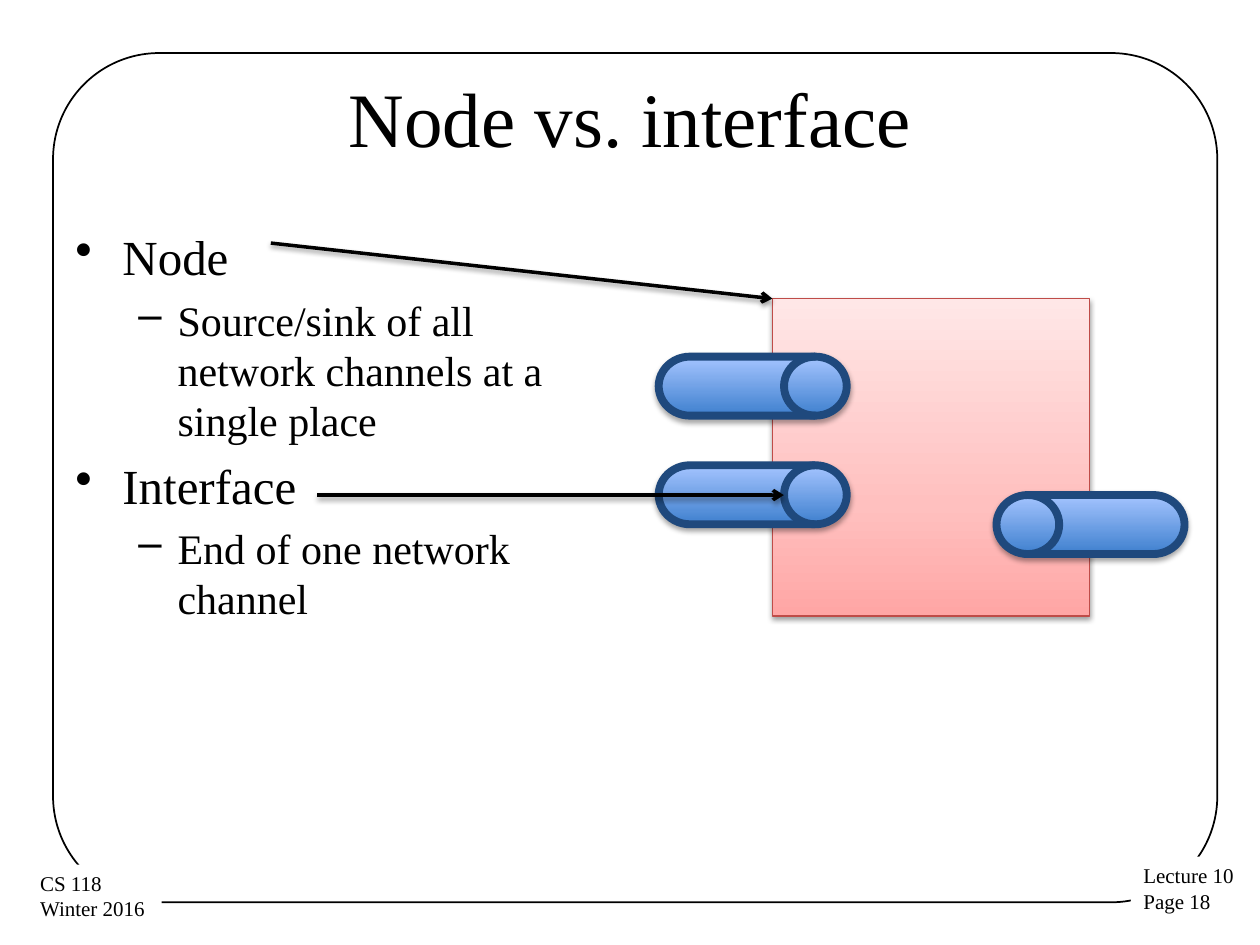
from dataclasses import dataclass

from lxml.etree import SubElement
from pptx import Presentation
from pptx.dml.color import RGBColor
from pptx.enum.shapes import MSO_CONNECTOR, MSO_SHAPE
from pptx.enum.text import MSO_ANCHOR, PP_ALIGN
from pptx.oxml.ns import qn
from pptx.util import Cm, Pt


@dataclass(frozen=True)
class Theme:
    font: str = "Times New Roman"
    ink: str = "000000"
    paper: str = "FFFFFF"
    node_line: str = "BF4C48"
    node_stops: tuple = ((0, "FFA6A5"), (35, "FFC0BF"), (100, "FFE7E7"))
    drum_line: str = "1F497D"
    drum_stops: tuple = ((0, "3F80CE"), (100, "A4C4FF"))
    title_size: int = 44
    body_sizes: tuple = (28, 24)
    label_size: int = 12
    bullets: tuple = ("•", "–")
    # left margin and first-line indent per level, in cm
    indents: tuple = ((0.95, -0.95), (2.06, -0.79))


class Deck:
    """Holds the theme and the slide being drawn; all lengths are in cm."""

    def __init__(self, slide, theme):
        self.slide = slide
        self.theme = theme

    def style_line(self, line, color, width):
        line.color.rgb = RGBColor.from_string(color)
        line.width = Pt(width)

    def style_text(self, p, text, size):
        p.text = text
        p.font.name = self.theme.font
        p.font.size = Pt(size)
        p.font.color.rgb = RGBColor.from_string(self.theme.ink)

    def add_shadow(self, effects, distance, opacity):
        """Put a soft shadow falling straight down into an effect list."""
        shadow = SubElement(effects, qn("a:outerShdw"), blurRad=str(Pt(3.1)),
                            dist=str(Pt(distance)), dir="5400000", rotWithShape="0")
        color = SubElement(shadow, qn("a:srgbClr"), val=self.theme.ink)
        SubElement(color, qn("a:alpha"), val=str(opacity * 1000))

    def shape(self, kind, x, y, w, h):
        sp = self.slide.shapes.add_shape(kind, Cm(x), Cm(y), Cm(w), Cm(h))
        sp.shadow.inherit = False
        return sp

    def frame(self, x, y, w, h):
        sp = self.shape(MSO_SHAPE.ROUNDED_RECTANGLE, x, y, w, h)
        sp.adjustments[0] = 0.125
        sp.fill.background()
        self.style_line(sp.line, self.theme.ink, 1)

    def text_box(self, x, y, w, h):
        sp = self.slide.shapes.add_textbox(Cm(x), Cm(y), Cm(w), Cm(h))
        sp.text_frame.word_wrap = True
        return sp

    def corner_label(self, x, y, w, h, lines):
        sp = self.text_box(x, y, w, h)
        sp.fill.solid()
        sp.fill.fore_color.rgb = RGBColor.from_string(self.theme.paper)
        tf = sp.text_frame
        tf.word_wrap = False
        for i, text in enumerate(lines):
            p = tf.add_paragraph() if i else tf.paragraphs[0]
            self.style_text(p, text, self.theme.label_size)

    def title(self, x, y, w, h, text):
        tf = self.text_box(x, y, w, h).text_frame
        tf.vertical_anchor = MSO_ANCHOR.MIDDLE
        p = tf.paragraphs[0]
        p.alignment = PP_ALIGN.CENTER
        self.style_text(p, text, self.theme.title_size)

    def bullet_list(self, x, y, w, h, items):
        tf = self.text_box(x, y, w, h).text_frame
        for i, (level, text) in enumerate(items):
            p = tf.add_paragraph() if i else tf.paragraphs[0]
            size = self.theme.body_sizes[level]
            p.level = level
            p.space_before = Pt(0.2 * size)
            self.style_text(p, text, size)
            margin, indent = self.theme.indents[level]
            pPr = p._p.get_or_add_pPr()
            pPr.set("marL", str(Cm(margin)))
            pPr.set("indent", str(Cm(indent)))
            bullet = pPr.makeelement(qn("a:buChar"), {"char": self.theme.bullets[level]})
            pPr.find(qn("a:spcBef")).addnext(bullet)

    def gradient_shape(self, kind, x, y, w, h, stops, line, width, distance, opacity):
        """Draw a shadowed shape whose gradient runs from bottom to top."""
        sp = self.shape(kind, x, y, w, h)
        sp.fill.gradient()
        sp.fill.gradient_angle = 90
        spPr = sp._element.spPr
        stop_list = spPr.find(qn("a:gradFill")).find(qn("a:gsLst"))
        stop_list.clear()
        for position, color in stops:
            stop = SubElement(stop_list, qn("a:gs"), pos=str(position * 1000))
            SubElement(stop, qn("a:srgbClr"), val=color)
        self.style_line(sp.line, line, width)
        self.add_shadow(spPr.find(qn("a:effectLst")), distance, opacity)
        return sp

    def node(self, x, y, side):
        self.gradient_shape(MSO_SHAPE.RECTANGLE, x, y, side, side,
                            self.theme.node_stops, self.theme.node_line, 0.75, 1.6, 38)

    def interface(self, x, y, flipped=False):
        sp = self.gradient_shape(MSO_SHAPE.FLOWCHART_DIRECT_ACCESS_STORAGE, x, y, 3.79, 1.19,
                                 self.theme.drum_stops, self.theme.drum_line, 4.5, 1.8, 35)
        if flipped:
            sp._element.spPr.find(qn("a:xfrm")).set("flipH", "1")

    def arrow(self, x1, y1, x2, y2):
        cxn = self.slide.shapes.add_connector(
            MSO_CONNECTOR.STRAIGHT, Cm(x1), Cm(y1), Cm(x2), Cm(y2))
        self.style_line(cxn.line, self.theme.ink, 2)
        SubElement(cxn.line._get_or_add_ln(), qn("a:tailEnd"), type="arrow")
        effects = SubElement(cxn._element.spPr, qn("a:effectLst"))
        self.add_shadow(effects, 1.6, 38)


def main():
    prs = Presentation()
    prs.slide_width, prs.slide_height = Cm(25.4), Cm(19.05)
    deck = Deck(prs.slides.add_slide(prs.slide_layouts[6]), Theme())

    deck.frame(1.07, 1.07, 23.47, 17.12)
    deck.corner_label(22.8, 17.27, 2.37, 1.31, ["Lecture 10", "Page 18"])
    deck.corner_label(0.56, 17.43, 2.7, 1.31, ["CS 118", "Winter 2016"])
    deck.title(1.27, 0.76, 22.86, 3.18, "Node vs. interface")
    deck.bullet_list(1.27, 4.45, 11.23, 12.57, [
        (0, "Node"),
        (1, "Source/sink of all network channels at a single place"),
        (0, "Interface"),
        (1, "End of one network channel"),
    ])

    deck.node(15.57, 6.02, 6.4)
    deck.interface(13.28, 7.19)
    deck.interface(13.28, 9.38)
    deck.interface(20.09, 9.98, flipped=True)
    deck.arrow(5.46, 4.9, 15.57, 6.02)
    deck.arrow(6.4, 9.98, 15.8, 9.98)

    prs.save("out.pptx")


if __name__ == "__main__":
    main()
